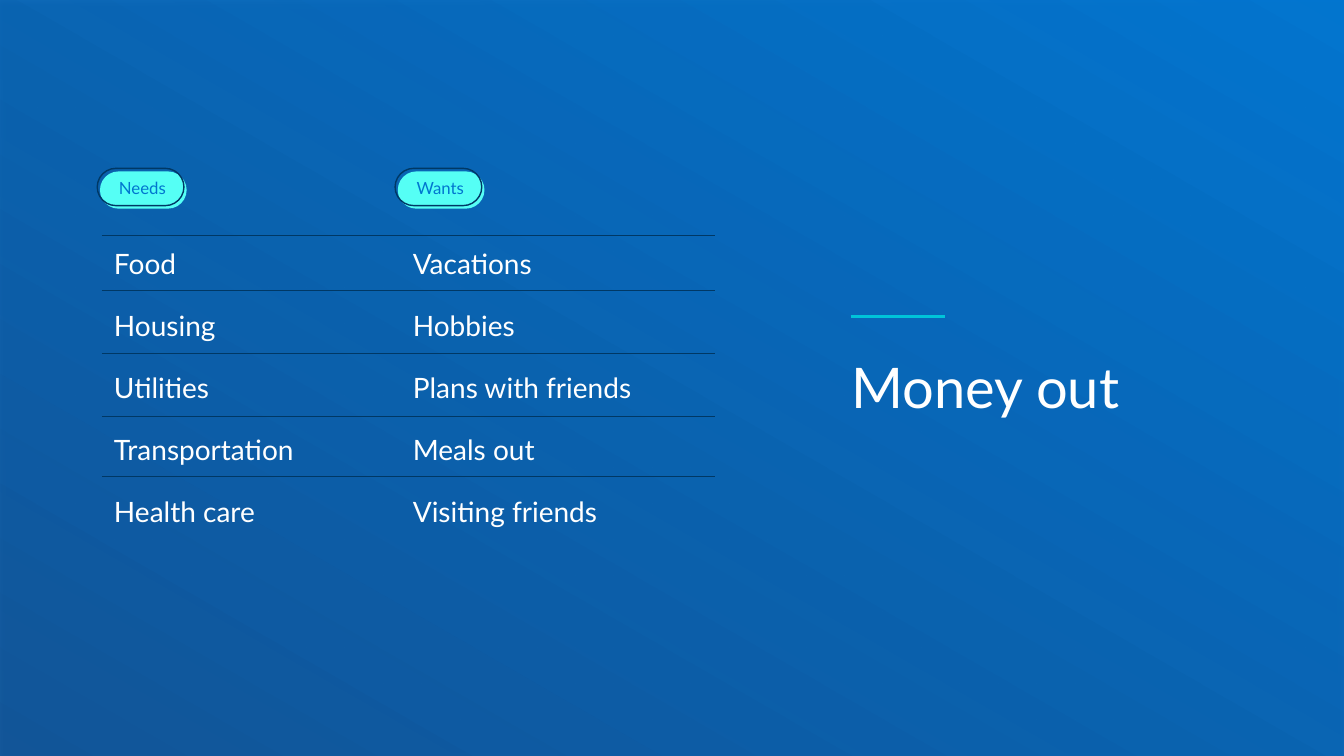
from dataclasses import dataclass

from lxml.etree import SubElement
from pptx import Presentation
from pptx.dml.color import RGBColor
from pptx.enum.shapes import MSO_CONNECTOR, MSO_SHAPE
from pptx.enum.text import MSO_AUTO_SIZE, PP_ALIGN
from pptx.oxml.ns import qn
from pptx.util import Inches, Pt

WIDTH, HEIGHT = Inches(13.33), Inches(7.5)
FONT = "Lato"
WHITE, NAVY, SKY, AQUA, TEAL = "FFFFFF", "003865", "0076CF", "55FFF5", "00C4D9"


@dataclass
class Spending:
    heading: str
    entries: list[str]
    left: float
    width: float
    height: float
    indent: float = 0


# Positions are percentages of the slide's width and height
SPENDINGS = [
    Spending("Needs", ["Food", "Housing", "Utilities", "Transportation", "Health care"],
             7.74, 19.65, 55.73),
    Spending("Wants", ["Vacations", "Hobbies", "Plans with friends", "Meals out",
                       "Visiting friends"], 29.9, 27.53, 47.6, indent=0.01),
]
DIVIDER_ROWS = [31.2, 38.4, 46.8, 55.07, 63.07]
PILL_TOP, PILL_WIDTH, PILL_HEIGHT = 22.67, 6.45, 4.93


def col(share: float) -> int:
    return round(WIDTH * share / 100)


def row(share: float) -> int:
    return round(HEIGHT * share / 100)


def rgb(colour: str) -> RGBColor:
    return RGBColor.from_string(colour)


def add_text(lines: list[str], left: float, top: float, width: float, height: float, *,
             size: float, colour: str = WHITE, align=PP_ALIGN.LEFT, indent: float = 0,
             spacing: float = 1, after: float = 0, grow: bool = True) -> None:
    frame = slide.shapes.add_textbox(col(left), row(top), col(width), row(height)).text_frame
    frame.word_wrap = True
    frame.auto_size = MSO_AUTO_SIZE.SHAPE_TO_FIT_TEXT if grow else MSO_AUTO_SIZE.NONE
    frame.text = "\n".join(lines)
    for paragraph in frame.paragraphs:
        paragraph.alignment = align
        paragraph.line_spacing = spacing
        paragraph.space_after = Pt(after)
        paragraph.font.size = Pt(size)
        paragraph.font.name = FONT
        paragraph.font.color.rgb = rgb(colour)
        if indent:
            paragraph._p.get_or_add_pPr().set("marL", str(Inches(indent)))


def add_rule(left: float, right: float, top: float, colour: str, weight: float) -> None:
    rule = slide.shapes.add_connector(MSO_CONNECTOR.STRAIGHT, col(left), row(top),
                                      col(right), row(top))
    rule.line.color.rgb = rgb(colour)
    rule.line.width = Pt(weight)
    SubElement(rule._element.spPr, qn("a:effectLst"))


def add_pill(left: float, top: float, fill: str = "", line: str = "") -> None:
    pill = slide.shapes.add_shape(MSO_SHAPE.ROUNDED_RECTANGLE, col(left), row(top),
                                  col(PILL_WIDTH), row(PILL_HEIGHT))
    pill.adjustments[0] = 0.5
    pill.shadow.inherit = False
    if fill:
        pill.fill.solid()
        pill.fill.fore_color.rgb = rgb(fill)
    else:
        pill.fill.background()
    if line:
        pill.line.color.rgb = rgb(line)
        pill.line.width = Pt(1)
    else:
        pill.line.fill.background()


def add_backdrop() -> None:
    backdrop = slide.shapes.add_shape(MSO_SHAPE.RECTANGLE, 0, 0, WIDTH, HEIGHT)
    backdrop.line.fill.background()
    backdrop.fill.gradient()
    backdrop.fill.gradient_angle = 60
    for stop, colour in zip(backdrop.fill.gradient_stops, ["004C97", "0376D0"]):
        stop.color.rgb = rgb(colour)
    # The dark end is slightly transparent, over a soft shadow
    dark = next(backdrop._element.spPr.iter(qn("a:srgbClr")))
    SubElement(dark, qn("a:alpha"), val="90000")
    backdrop.shadow.inherit = False
    effects = backdrop._element.spPr.find(qn("a:effectLst"))
    shadow = SubElement(effects, qn("a:outerShdw"), blurRad=str(Pt(3.1)),
                        dist=str(Pt(1.8)), dir="5400000", rotWithShape="0")
    black = SubElement(shadow, qn("a:srgbClr"), val="000000")
    SubElement(black, qn("a:alpha"), val="35000")


def add_spending(spending: Spending) -> None:
    add_text(spending.entries, spending.left, 31.47, spending.width, spending.height,
             size=20, indent=spending.indent, spacing=1.1, after=18)
    pill_left = spending.left - 0.3
    add_pill(pill_left, PILL_TOP, fill=AQUA)
    add_text([spending.heading], pill_left - 1.27, 22.53, 8.48, 4.13, size=12, colour=SKY,
             align=PP_ALIGN.CENTER, indent=0.05, spacing=1.1, after=4)
    add_pill(pill_left - 0.2, PILL_TOP - 0.4, line=NAVY)


presentation = Presentation()
presentation.slide_width, presentation.slide_height = WIDTH, HEIGHT
slide = presentation.slides.add_slide(presentation.slide_layouts[6])

add_backdrop()

# Needs and wants
for spending in SPENDINGS:
    add_spending(spending)
for divider_row in DIVIDER_ROWS:
    add_rule(7.58, 53.18, divider_row, NAVY, 0.5)

# Title with its accent
add_text(["Money out"], 62.63, 46, 26.33, 37.07, size=40, grow=False)
add_rule(63.3, 70.28, 41.87, TEAL, 2)

presentation.save("out.pptx")
